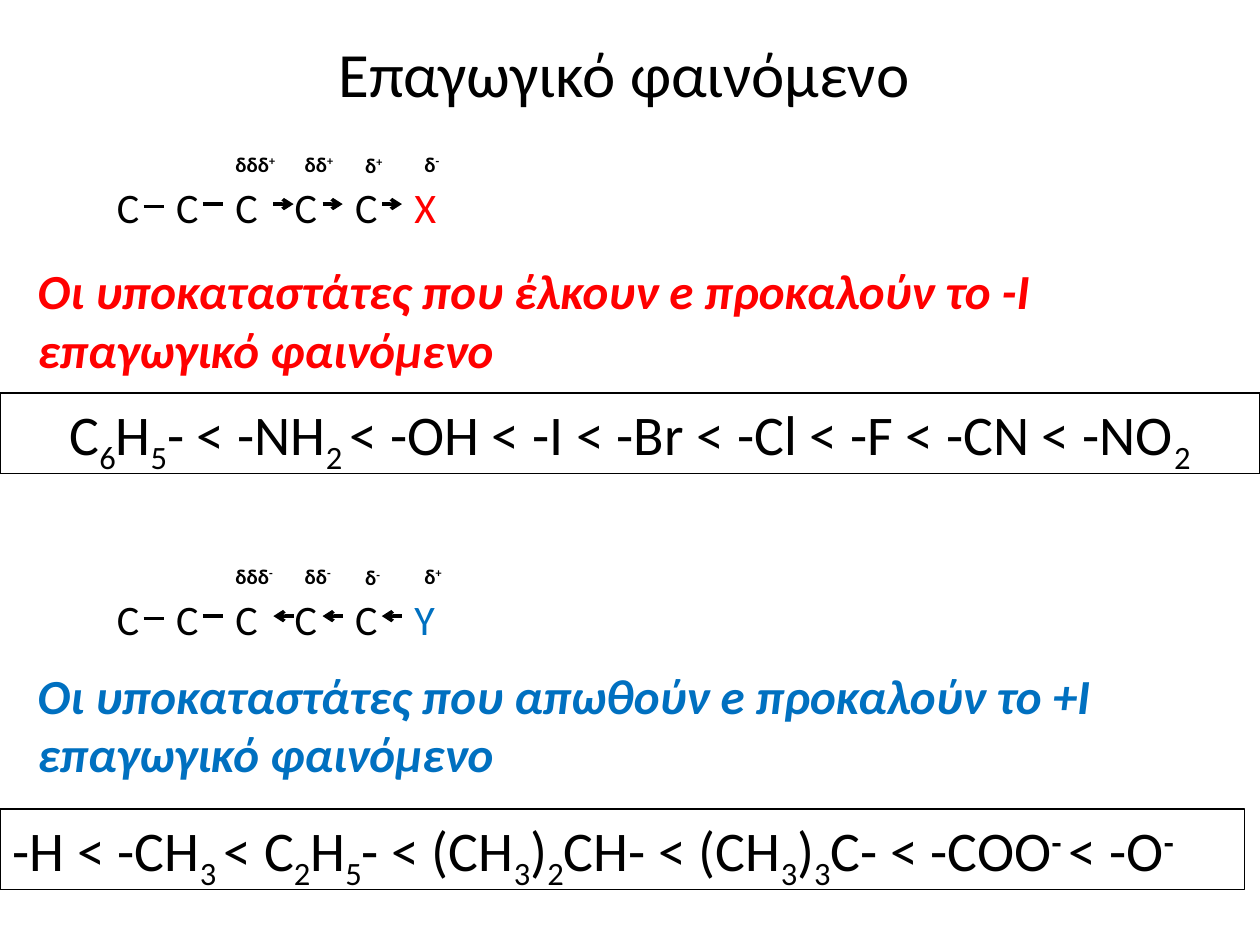
from dataclasses import dataclass

import pptx
import pptx.dml.color
import pptx.enum.shapes
import pptx.enum.text
import pptx.oxml.xmlchemy
import pptx.shapes.autoshape
import pptx.shapes.shapetree
import pptx.util
from pptx.util import Inches

COLORS = {"black": "000000", "red": "FF0000", "blue": "0070C0"}
FONT = "Calibri"
BASELINES = {"_": -25000, "^": 30000}
ALIGN = pptx.enum.text.PP_ALIGN
ANCHOR = pptx.enum.text.MSO_ANCHOR


@dataclass(frozen=True)
class Style:
    size: int
    color: str = "black"
    bold: bool = False
    italic: bool = False
    align: ALIGN = ALIGN.LEFT
    anchor: ANCHOR = ANCHOR.TOP
    bold_superscript: bool = False


@dataclass(frozen=True)
class Box:
    left: float
    top: float
    width: float
    height: float


@dataclass(frozen=True)
class Chain:
    top: float
    substituent: str
    color: str
    carbon_charge: str
    substituent_charge: str
    arrows_right: bool


CHAINS = [
    Chain(1.39, "Χ", "red", "+", "-", True),
    Chain(4.66, "Υ", "blue", "-", "+", False),
]
CARBON_LEFTS = [0.83, 1.3, 1.77, 2.24, 2.72]
PLAIN_BONDS = [(1.14, 0.25), (1.61, 0.23)]
ARROW_LEFTS = [2.17, 2.56, 3.03]
BOND_LENGTH = 0.16
ATOM = Style(24)
CHARGE = Style(12, bold=True)


def rgb(name: str) -> pptx.dml.color.RGBColor:
    return pptx.dml.color.RGBColor.from_string(COLORS[name])


def write_text(shape: pptx.shapes.autoshape.Shape, markup: str, style: Style) -> None:
    frame = shape.text_frame
    frame.word_wrap = True
    frame.vertical_anchor = style.anchor
    paragraph = frame.paragraphs[0]
    paragraph.alignment = style.align
    font = paragraph.font
    font.name = FONT
    font.size = pptx.util.Pt(style.size)
    font.bold = style.bold
    font.italic = style.italic
    font.color.rgb = rgb(style.color)
    for piece in markup.split("|"):
        run = paragraph.add_run()
        mark = piece[0]
        if mark in BASELINES:
            run.text = piece[1:]
            run.font._element.set("baseline", str(BASELINES[mark]))
            if mark == "^" and style.bold_superscript:
                run.font.bold = True
        else:
            run.text = piece


def add_text(shapes: pptx.shapes.shapetree._BaseGroupShapes, box: Box,
             markup: str, style: Style) -> None:
    shape = shapes.add_textbox(
        Inches(box.left), Inches(box.top), Inches(box.width), Inches(box.height))
    write_text(shape, markup, style)


def add_series(shapes: pptx.shapes.shapetree._BaseGroupShapes, box: Box,
               markup: str, style: Style) -> None:
    shape = shapes.add_shape(
        pptx.enum.shapes.MSO_SHAPE.RECTANGLE,
        Inches(box.left), Inches(box.top), Inches(box.width), Inches(box.height))
    shape.shadow.inherit = False
    shape.fill.background()
    shape.line.color.rgb = rgb("black")
    shape.line.width = pptx.util.Pt(0.75)
    write_text(shape, markup, style)


def add_bond(shapes: pptx.shapes.shapetree._BaseGroupShapes,
             start: float, end: float, y: float, arrow: bool) -> None:
    connector = shapes.add_connector(
        pptx.enum.shapes.MSO_CONNECTOR.STRAIGHT,
        Inches(start), Inches(y), Inches(end), Inches(y))
    connector.line.color.rgb = rgb("black")
    connector.line.width = pptx.util.Pt(2)
    if arrow:
        line = connector.line._get_or_add_ln()
        tail = pptx.oxml.xmlchemy.OxmlElement("a:tailEnd")
        tail.set("type", "arrow")
        line.append(tail)
    connector._element.spPr.append(pptx.oxml.xmlchemy.OxmlElement("a:effectLst"))


def add_chain(shapes: pptx.shapes.shapetree.SlideShapes, chain: Chain) -> None:
    members = shapes.add_group_shape().shapes
    for left in CARBON_LEFTS:
        add_text(members, Box(left, chain.top, 0.39, 0.5), "C", ATOM)
    for left, drop in PLAIN_BONDS:
        add_bond(members, left, left + BOND_LENGTH, chain.top + drop, False)
    for left in ARROW_LEFTS:
        ends = (left, left + BOND_LENGTH)
        start, end = ends if chain.arrows_right else ends[::-1]
        add_bond(members, start, end, chain.top + 0.23, True)
    add_text(members, Box(3.19, chain.top, 0.55, 0.5), chain.substituent,
             Style(24, chain.color))
    charges = [
        (1.77, 0.24, 0.55, "δδδ", chain.carbon_charge),
        (2.32, 0.24, 0.47, "δδ", chain.carbon_charge),
        (2.8, 0.23, 0.39, "δ", chain.carbon_charge),
        (3.27, 0.24, 0.39, "δ", chain.substituent_charge),
    ]
    for left, rise, width, deltas, sign in charges:
        add_text(members, Box(left, chain.top - rise, width, 0.3),
                 f"{deltas}|^{sign}", CHARGE)


def main() -> None:
    presentation = pptx.Presentation()
    presentation.slide_width = Inches(10)
    presentation.slide_height = Inches(7.5)
    slide = presentation.slides.add_slide(presentation.slide_layouts[6])
    shapes = slide.shapes
    add_text(shapes, Box(0.51, 0, 9, 1.15), "Επαγωγικό φαινόμενο ",
             Style(36, align=ALIGN.CENTER, anchor=ANCHOR.MIDDLE))
    add_text(shapes, Box(0.2, 2.02, 9.37, 1.04),
             "Οι υποκαταστάτες που έλκουν e προκαλούν το -Ι επαγωγικό φαινόμενο",
             Style(28, "red", bold=True, italic=True))
    add_series(shapes, Box(0, 3.12, 10, 0.64),
               "C|_6|H|_5|- < -NH|_2 |< -OH < -I < -Br < -Cl < -F < -CN < -NO|_2",
               Style(32, align=ALIGN.CENTER))
    for chain in CHAINS:
        add_chain(shapes, chain)
    add_text(shapes, Box(0.2, 5.23, 9.37, 1.04),
             "Οι υποκαταστάτες που απωθούν e προκαλούν το +Ι επαγωγικό φαινόμενο",
             Style(28, "blue", bold=True, italic=True))
    add_series(shapes, Box(0, 6.42, 9.88, 0.64),
               "-H < -CH|_3 |< C|_2|H|_5|- < (CH|_3|)|_2|CH- < (CH|_3|)|_3"
               "|C- < -COO|^- |< -O|^-",
               Style(32, bold_superscript=True))
    presentation.save("out.pptx")


if __name__ == "__main__":
    main()
